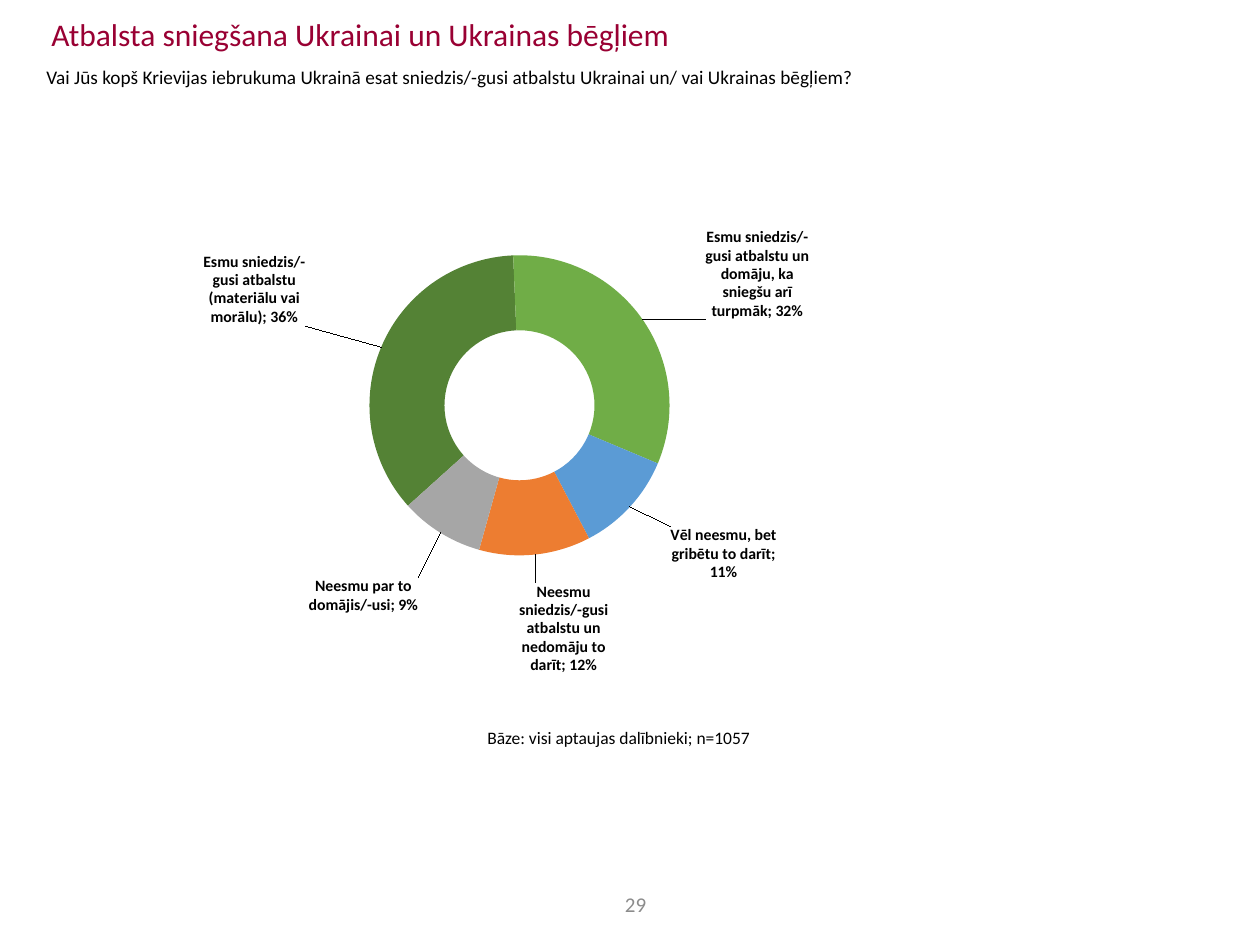
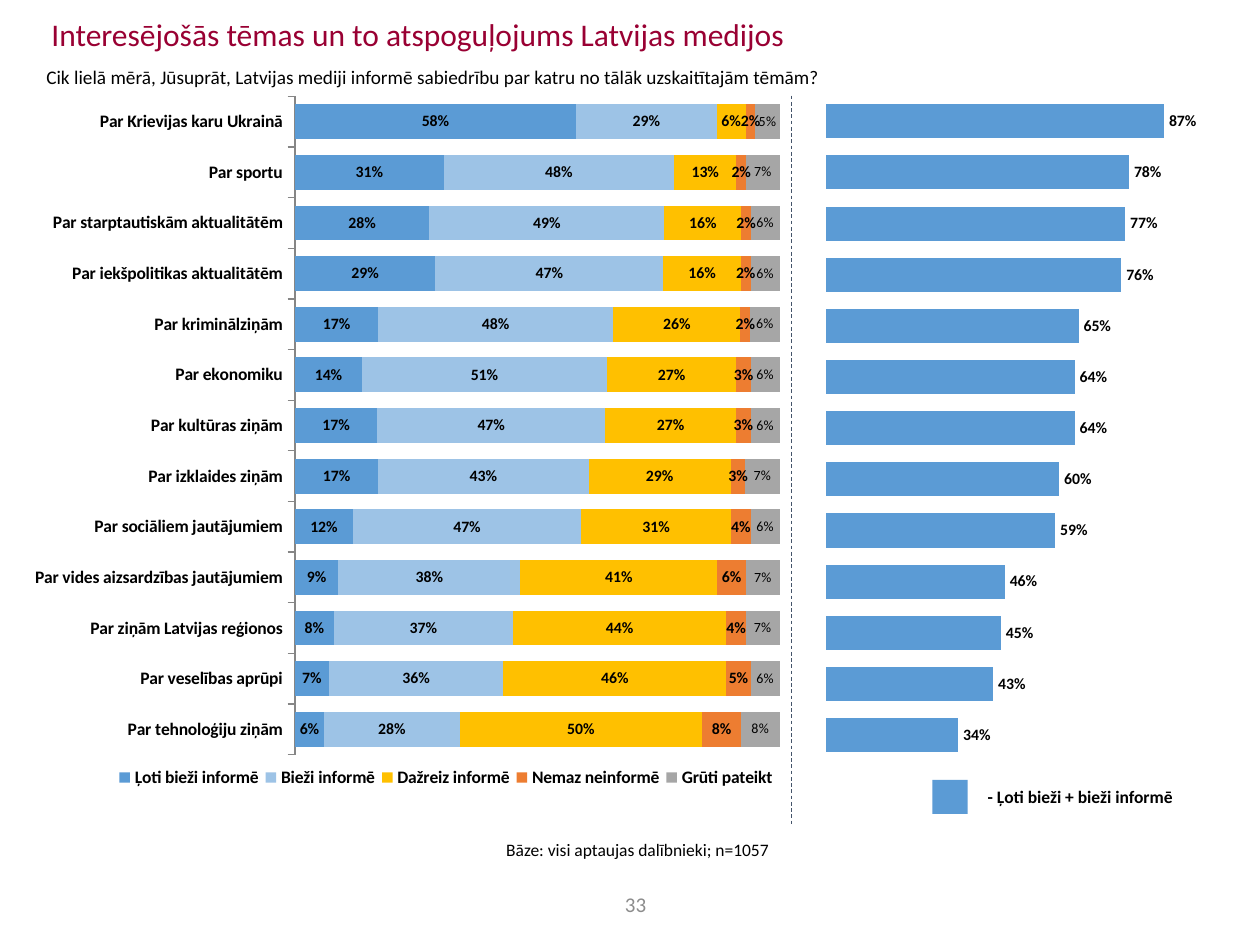
"""Builds two survey slides on support for Ukraine and on media coverage."""
from copy import deepcopy

from lxml.etree import SubElement
from pptx import Presentation
from pptx.chart.data import CategoryChartData
from pptx.dml.color import RGBColor
from pptx.enum.chart import XL_CHART_TYPE as ChartType, XL_LEGEND_POSITION as LegendPosition
from pptx.enum.chart import XL_TICK_MARK as TickMark
from pptx.enum.dml import MSO_LINE as Dash
from pptx.enum.shapes import MSO_CONNECTOR as Connector, MSO_SHAPE as Shape
from pptx.enum.text import MSO_ANCHOR as Anchor, PP_ALIGN as Align
from pptx.oxml import parse_xml
from pptx.oxml.ns import nsdecls, qn
from pptx.util import Pt

FONT = "Calibri"
COLORS = {
    "title": "990033", "text": "000000", "number": "8C8C8C", "axis": "868686",
    "divider": "44546A", "dark_green": "548235", "green": "70AD47", "blue": "5B9BD5",
    "light_blue": "9DC3E6", "yellow": "FFC000", "orange": "ED7D31", "gray": "A6A6A6",
}
BASE_TEXT = "Bāze: visi aptaujas dalībnieki; n=1057"

SUPPORT = [
    ("Esmu sniedzis/-gusi atbalstu (materiālu vai morālu)", 0.36, "dark_green", (-0.2, -0.13)),
    ("Esmu sniedzis/-gusi atbalstu un domāju, ka sniegšu arī turpmāk", 0.32, "green", (0.18, -0.12)),
    ("Vēl neesmu, bet gribētu to darīt", 0.11, "blue", (0.15, 0.13)),
    ("Neesmu sniedzis/-gusi atbalstu un nedomāju to darīt", 0.12, "orange", (0.04, 0.2)),
    ("Neesmu par to domājis/-usi", 0.09, "gray", (-0.12, 0.17)),
]
TOPICS = [
    "Par tehnoloģiju ziņām", "Par veselības aprūpi", "Par ziņām Latvijas reģionos",
    "Par vides aizsardzības jautājumiem", "Par sociāliem jautājumiem", "Par izklaides ziņām",
    "Par kultūras ziņām", "Par ekonomiku", "Par kriminālziņām",
    "Par iekšpolitikas aktualitātēm", "Par starptautiskām aktualitātēm", "Par sportu",
    "Par Krievijas karu Ukrainā",
]
COVERAGE = [
    ("Ļoti bieži informē", "blue", [6, 7, 8, 9, 12, 17, 17, 14, 17, 29, 28, 31, 58]),
    ("Bieži informē", "light_blue", [28, 36, 37, 38, 47, 43, 47, 51, 48, 47, 49, 48, 29]),
    ("Dažreiz informē", "yellow", [50, 46, 44, 41, 31, 29, 27, 27, 26, 16, 16, 13, 6]),
    ("Nemaz neinformē", "orange", [8, 5, 4, 6, 4, 3, 3, 3, 2, 2, 2, 2, 2]),
    ("Grūti pateikt", "gray", [8, 6, 7, 7, 6, 7, 6, 6, 6, 6, 6, 7, 5]),
]
OFTEN = [("Series 1", "blue", [34, 43, 45, 46, 59, 60, 64, 64, 65, 76, 77, 78, 87])]


def rgb(name):
    """Return the named colour."""
    return RGBColor.from_string(COLORS[name])


def set_font(font, size, color="text", bold=False):
    """Set face, size, colour and weight of a font."""
    font.name, font.size, font.bold = FONT, Pt(size), bold
    font.color.rgb = rgb(color)


def paint(fill, color):
    """Fill with one plain colour."""
    fill.solid()
    fill.fore_color.rgb = rgb(color)


def add_text(page, bounds, text, size, color="text", bold=False, wrap=True):
    """Add a one-paragraph text box and return its frame."""
    frame = page.shapes.add_textbox(*map(Pt, bounds)).text_frame
    frame.word_wrap = wrap
    para = frame.paragraphs[0]
    para.text = text
    set_font(para.font, size, color, bold)
    return frame


def add_page(deck, title, question, number):
    """Add a blank page with its title, question and page number."""
    page = deck.slides.add_slide(deck.slide_layouts[6])
    add_text(page, (19.4, 33.8, 688.3, 20.9), question, 11)
    add_text(page, (22.3, 5, 674.6, 31.7), title, 18, "title")
    frame = add_text(page, (343.4, 506.5, 39.6, 20.2), number, 12, "number")
    frame.vertical_anchor = Anchor.MIDDLE
    frame.paragraphs[0].alignment = Align.CENTER
    return page


def add_base(page, left, top):
    """Add the note on the survey base."""
    add_text(page, (left, top, 166.3, 19.4), BASE_TEXT, 10, wrap=False)


def manual_layout(offsets, inner=False, edge=True):
    """Return a layout element with the given fractions of the chart."""
    parts = '<c:layoutTarget val="inner"/>' if inner else ""
    if edge:
        parts += '<c:xMode val="edge"/><c:yMode val="edge"/>'
    parts += "".join(f'<c:{key} val="{value}"/>' for key, value in zip("xywh", offsets))
    return parse_xml(f'<c:layout {nsdecls("c")}><c:manualLayout>{parts}</c:manualLayout></c:layout>')


def add_chart(page, kind, bounds, plot_box, categories, series):
    """Add a chart whose plot area is placed by hand."""
    data = CategoryChartData(number_format="0%")
    data.categories = categories
    for name, values in series:
        data.add_series(name, values)
    chart = page.shapes.add_chart(kind, *map(Pt, bounds), data).chart
    chart.has_title = chart.has_legend = False
    set_font(chart.font, 18)
    area = chart.element.xpath("c:chart/c:plotArea")[0]
    for old in area.findall(qn("c:layout")):
        area.remove(old)
    area.insert(0, manual_layout(plot_box, inner=True))
    return chart


def label_series(series, size=9, bold=True):
    """Show the values of a series as percentages."""
    labels = series.data_labels
    labels.show_value = True
    labels.number_format, labels.number_format_is_linked = "0%", False
    set_font(labels.font, size, bold=bold)
    return labels


def add_bars(page, kind, bounds, plot_box, categories, rows, gap):
    """Add a bar chart of percentages with a hidden value axis."""
    series = [(name, [value / 100 for value in values]) for name, _, values in rows]
    chart = add_chart(page, kind, bounds, plot_box, categories, series)
    axis = chart.value_axis
    axis.visible = axis.has_major_gridlines = False
    axis.minimum_scale, axis.maximum_scale = 0, 1
    plot = chart.plots[0]
    plot.gap_width, plot.vary_by_categories = gap, False
    for bars, (_, color, _) in zip(plot.series, rows):
        paint(bars.format.fill, color)
        unsure = color == "gray"
        label_series(bars, 8 if unsure else 9, not unsure)
    return chart


def add_support_ring(page):
    """Add the doughnut of answers with labels led out of the ring."""
    names, values, colors, offsets = zip(*SUPPORT)
    chart = add_chart(page, ChartType.DOUGHNUT, (41, 84.2, 461.5, 318.2),
                      (0.295, 0.194, 0.519, 0.539), names, [("Series 1", values)])
    chart.element.xpath(".//c:firstSliceAng")[0].set("val", "228")
    chart.element.xpath(".//c:holeSize")[0].set("val", "40")
    ring = chart.plots[0].series[0]
    labels = label_series(ring)
    labels.show_category_name = True
    element = labels._element
    separator = SubElement(element, qn("c:separator"))
    separator.text = "; "
    element.find(qn("c:showBubbleSize")).addnext(separator)
    shared = [child for child in element if child.tag != qn("c:showLeaderLines")]
    for index, (color, offset) in enumerate(zip(colors, offsets)):
        paint(ring.points[index].format.fill, color)
        label = parse_xml(f'<c:dLbl {nsdecls("c")}><c:idx val="{index}"/></c:dLbl>')
        label.append(manual_layout(offset, edge=False))
        label.extend(deepcopy(child) for child in shared)
        element.insert(index, label)


def add_coverage_bars(page):
    """Add the stacked bars of answers by topic."""
    chart = add_bars(page, ChartType.BAR_STACKED_100, (19.4, 54.7, 426.2, 421.2),
                     (0.35, 0, 0.65, 0.894), TOPICS, COVERAGE, 45)
    chart.plots[0].overlap = 100
    axis = chart.category_axis
    axis.major_tick_mark = TickMark.OUTSIDE
    axis.format.line.color.rgb = rgb("axis")
    set_font(axis.tick_labels.font, 10, bold=True)
    chart.has_legend = True
    legend = chart.legend
    legend.position, legend.include_in_layout = LegendPosition.RIGHT, False
    set_font(legend.font, 10, bold=True)
    element = legend._element
    for old in element.findall(qn("c:layout")):
        element.remove(old)
    element.find(qn("c:legendPos")).addnext(manual_layout((0.105, 0.9, 0.9, 0.05)))


def add_often_bars(page):
    """Add the bars of combined frequent answers and their key."""
    chart = add_bars(page, ChartType.BAR_CLUSTERED, (467.3, 44.6, 240.5, 390.2),
                     (0.02, 0.026, 0.923, 0.974), [str(n + 1) for n in range(len(TOPICS))],
                     OFTEN, 50)
    chart.category_axis.visible = False
    key = page.shapes.add_shape(Shape.RECTANGLE, *map(Pt, (532.8, 445.7, 20.2, 19.4)))
    key.shadow.inherit = False
    paint(key.fill, "blue")
    key.line.fill.background()
    add_text(page, (557.3, 445.7, 157, 19.4), "- Ļoti bieži + bieži informē", 10, bold=True)


def add_divider(page, left, top, bottom):
    """Add a dashed vertical line."""
    divider = page.shapes.add_connector(Connector.STRAIGHT, *map(Pt, (left, top, left, bottom)))
    divider.line.color.rgb = rgb("divider")
    divider.line.width = Pt(0.5)
    divider.line.dash_style = Dash.DASH
    SubElement(divider._element.spPr, qn("a:effectLst"))


def main():
    """Build and save the deck."""
    deck = Presentation()
    deck.slide_width, deck.slide_height = Pt(720), Pt(540)

    page = add_page(deck, "Atbalsta sniegšana Ukrainai un Ukrainas bēgļiem",
                    "Vai Jūs kopš Krievijas iebrukuma Ukrainā esat sniedzis/-gusi atbalstu "
                    "Ukrainai un/ vai Ukrainas bēgļiem?", "29")
    add_support_ring(page)
    add_base(page, 271.4, 411.8)

    page = add_page(deck, "Interesējošās tēmas un to atspoguļojums Latvijas medijos",
                    "Cik lielā mērā, Jūsuprāt, Latvijas mediji informē sabiedrību par katru "
                    "no tālāk uzskaitītajām tēmām?", "33")
    add_coverage_bars(page)
    add_base(page, 282.2, 475.9)
    add_divider(page, 452.2, 54.7, 472.3)
    add_often_bars(page)
    deck.save("out.pptx")


if __name__ == "__main__":
    main()
